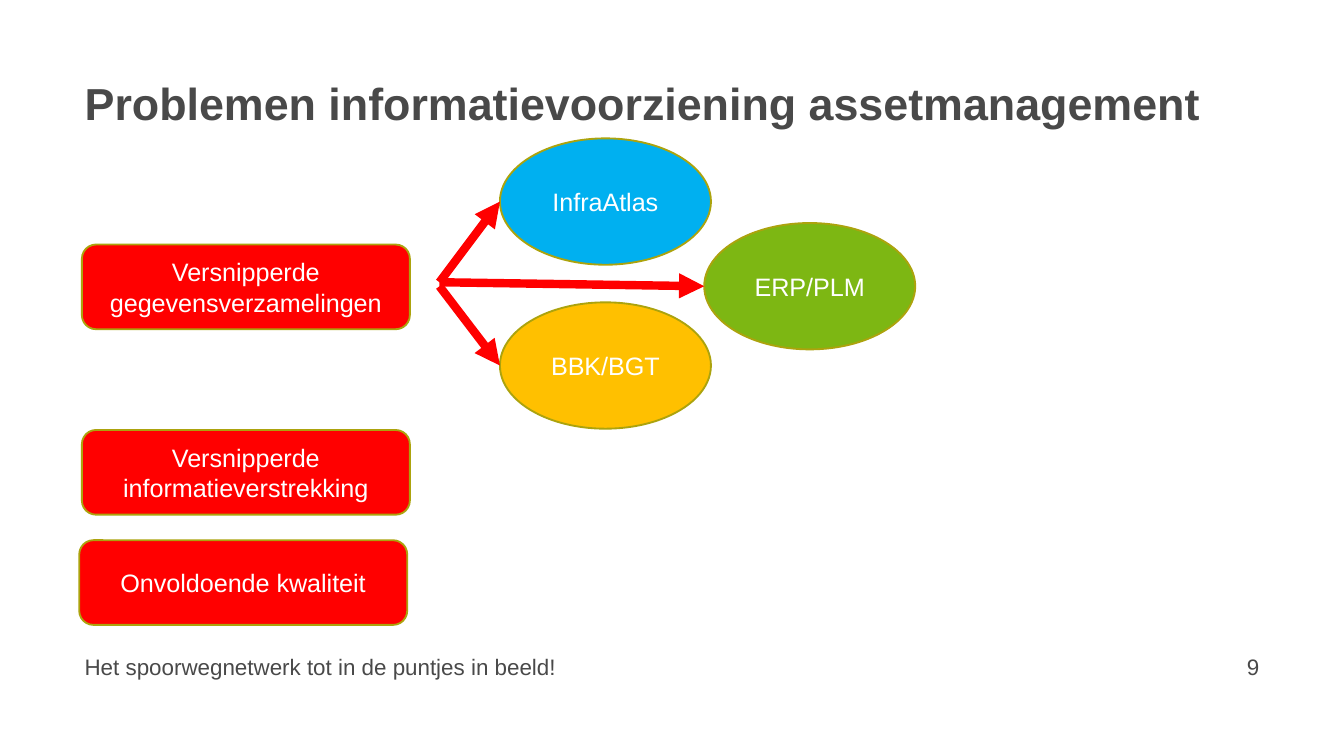
from lxml import etree
from pptx import Presentation
from pptx.dml.color import RGBColor
from pptx.enum.shapes import MSO_CONNECTOR, MSO_SHAPE
from pptx.enum.text import MSO_ANCHOR, MSO_AUTO_SIZE, PP_ALIGN
from pptx.oxml.ns import qn
from pptx.util import Inches, Pt

ELLIPSE = MSO_SHAPE.OVAL
ROUNDED = MSO_SHAPE.ROUNDED_RECTANGLE
STRAIGHT = MSO_CONNECTOR.STRAIGHT
TOP, MIDDLE = MSO_ANCHOR.TOP, MSO_ANCHOR.MIDDLE
LEFT, CENTER, RIGHT = PP_ALIGN.LEFT, PP_ALIGN.CENTER, PP_ALIGN.RIGHT
NO_AUTOFIT = MSO_AUTO_SIZE.NONE

SLIDE_WIDTH = 10
SLIDE_HEIGHT = SLIDE_WIDTH * 9 / 16
GREY, WHITE, RED, OLIVE = "494949", "FFFFFF", "FF0000", "ACA30D"
MARGIN = 0.63
FOOTER_TOP, FOOTER_HEIGHT = 4.86, 0.41
PROBLEM_SIZE = (2.44, 0.63)
SYSTEM_SIZE = (1.57, 0.94)

TITLE_FORMAT = {"name": "Arial", "size": Pt(24), "bold": True}
FOOTER_FORMAT = {"name": "Arial", "size": Pt(12)}
LABEL_FORMAT = {"name": "Arial", "size": Pt(13.5)}

# Text, left, top
PROBLEMS = [
    ("Versnipperde gegevensverzamelingen", 0.61, 1.82),
    ("Versnipperde informatieverstrekking", 0.61, 3.2),
    ("Onvoldoende kwaliteit", 0.59, 4.02),
]
# Text, left, top, fill, height at which its arrow starts
SYSTEMS = [
    ("InfraAtlas", 3.72, 1.03, "00B0F0", 2.1),
    ("ERP/PLM", 5.24, 1.66, "7DB713", 2.1),
    ("BBK/BGT", 3.72, 2.25, "FFC000", 2.13),
]
ARROW_LEFT = 3.27


def color(value):
    return RGBColor.from_string(value)


def write_text(shape, text, font_format, text_color, align, anchor):
    frame = shape.text_frame
    frame.text = text
    frame.word_wrap = True
    frame.vertical_anchor = anchor
    paragraph = frame.paragraphs[0]
    paragraph.alignment = align
    for name, value in font_format.items():
        setattr(paragraph.font, name, value)
    paragraph.font.color.rgb = color(text_color)
    return frame


def remove_insets(frame):
    for side in ("left", "top", "right", "bottom"):
        setattr(frame, f"margin_{side}", 0)


def set_title(slide, text):
    title = slide.shapes.title
    place = {"left": MARGIN, "top": 0.61, "width": 8.74, "height": 0.94}
    for name, value in place.items():
        setattr(title, name, Inches(value))
    frame = write_text(title, text, TITLE_FORMAT, GREY, LEFT, TOP)
    frame.auto_size = NO_AUTOFIT
    frame.paragraphs[0].line_spacing = 0.9
    remove_insets(frame)


def add_footer(slide, text, left, width, align):
    box = slide.shapes.add_textbox(
        Inches(left), Inches(FOOTER_TOP), Inches(width), Inches(FOOTER_HEIGHT))
    remove_insets(write_text(box, text, FOOTER_FORMAT, GREY, align, TOP))


def add_node(slide, kind, text, left, top, size, fill):
    shape = slide.shapes.add_shape(
        kind, Inches(left), Inches(top), *map(Inches, size))
    shape.shadow.inherit = False
    shape.fill.solid()
    shape.fill.fore_color.rgb = color(fill)
    shape.line.color.rgb = color(OLIVE)
    shape.line.width = Pt(1)
    write_text(shape, text, LABEL_FORMAT, WHITE, CENTER, MIDDLE)


def add_arrow(slide, start, end):
    arrow = slide.shapes.add_connector(
        STRAIGHT, *map(Inches, start), *map(Inches, end))
    arrow.line.color.rgb = color(RED)
    arrow.line.width = Pt(4.5)
    line = arrow.line._get_or_add_ln()
    etree.SubElement(line, qn("a:tailEnd"), type="triangle")
    etree.SubElement(arrow._element.spPr, qn("a:effectLst"))


def main():
    presentation = Presentation()
    presentation.slide_width = Inches(SLIDE_WIDTH)
    presentation.slide_height = Inches(SLIDE_HEIGHT)
    slide = presentation.slides.add_slide(presentation.slide_layouts[5])

    # Title and footer
    set_title(slide, "Problemen informatievoorziening assetmanagement")
    add_footer(slide, "Het spoorwegnetwerk tot in de puntjes in beeld!",
               MARGIN, 8.07, LEFT)
    add_footer(slide, "9", 8.7, 0.67, RIGHT)

    # Problems on the left
    for text, left, top in PROBLEMS:
        add_node(slide, ROUNDED, text, left, top, PROBLEM_SIZE, RED)

    # Systems holding the scattered data
    for text, left, top, fill, _ in SYSTEMS:
        add_node(slide, ELLIPSE, text, left, top, SYSTEM_SIZE, fill)

    # Arrows to the left edge of each system
    for _, left, top, _, start_top in SYSTEMS:
        middle = top + SYSTEM_SIZE[1] / 2
        add_arrow(slide, (ARROW_LEFT, start_top), (left, middle))

    presentation.save("out.pptx")


if __name__ == "__main__":
    main()
